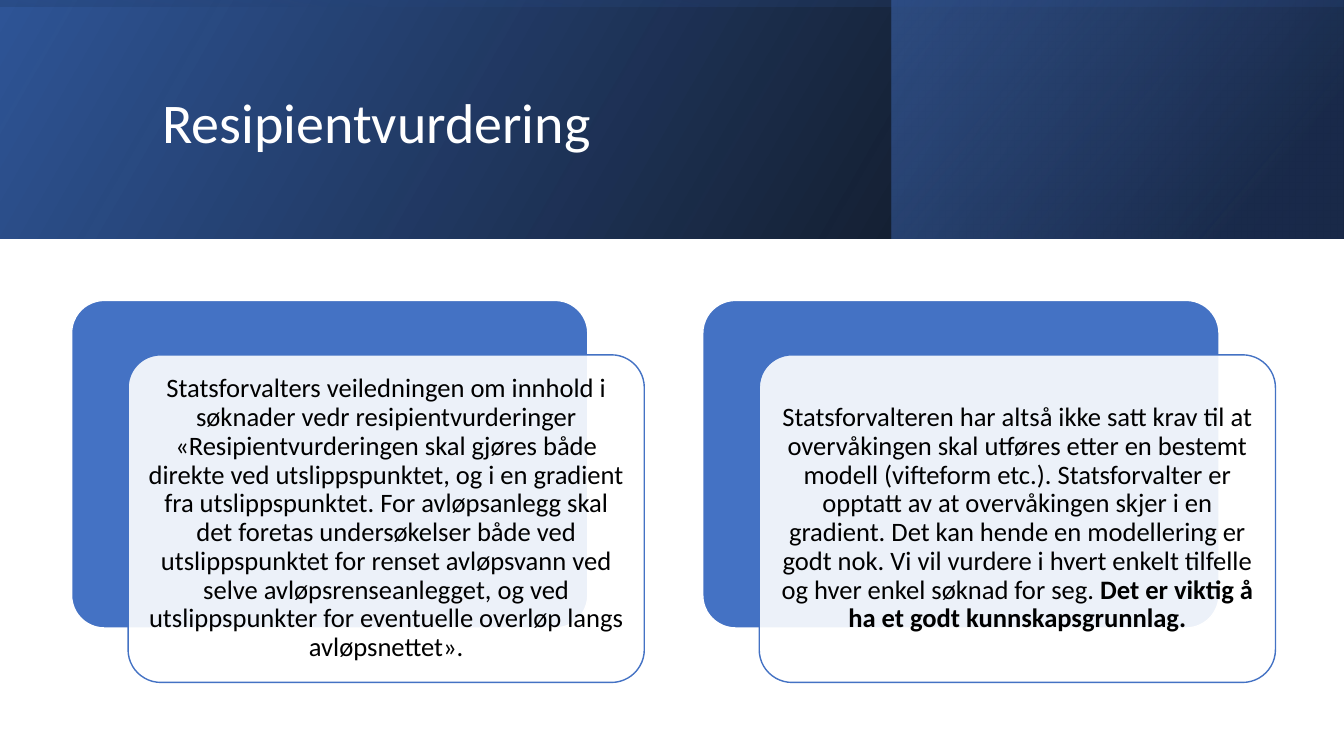
from dataclasses import dataclass

from pptx import Presentation, util as u
from pptx.dml.color import RGBColor
from pptx.enum import shapes, text
from pptx.oxml import parse_xml
from pptx.oxml.ns import nsdecls, qn

WHITE = RGBColor(0xFF, 0xFF, 0xFF)
BLACK = RGBColor(0x00, 0x00, 0x00)
BLUE = RGBColor(0x44, 0x72, 0xC4)
DEEP_BLUE = RGBColor(0x2F, 0x55, 0x97)
NAVY = RGBColor(0x20, 0x38, 0x64)

CARD_W, CARD_H = 5.12, 3.25
CARD_LEFT, CARD_TOP, CARD_PITCH = 0.71, 2.98, 6.26
FRONT_DX, FRONT_DY, TEXT_PAD = 0.56, 0.54, 0.1


@dataclass
class Stop:
    pos: int
    color: RGBColor
    alpha: int


@dataclass
class Band:
    box: tuple[float, float, float, float]
    stops: list[Stop]
    angle: int
    rotation: int = 0


@dataclass
class Run:
    text: str
    bold: bool = False


@dataclass
class Card:
    runs: list[Run]


BANDS = [
    Band((0, 0, 13.33, 2.37), [Stop(0, BLACK, 96), Stop(100, DEEP_BLUE, 100)], 330),
    Band((8.84, 0, 4.48, 2.37), [Stop(19, NAVY, 68), Stop(100, BLUE, 48)], 320),
    Band((5.48, -5.48, 2.37, 13.33), [Stop(23, DEEP_BLUE, 16), Stop(99, BLACK, 45)], 350, 270),
]

CARDS = [
    Card([Run(
        "Statsforvalters veiledningen om innhold i søknader vedr resipientvurderinger "
        "«Resipientvurderingen skal gjøres både direkte ved utslippspunktet, og i en gradient "
        "fra utslippspunktet. For avløpsanlegg skal det foretas undersøkelser både ved "
        "utslippspunktet for renset avløpsvann ved selve avløpsrenseanlegget, og ved "
        "utslippspunkter for eventuelle overløp langs avløpsnettet».")]),
    Card([
        Run("Statsforvalteren har altså ikke satt krav til at overvåkingen skal utføres etter "
            "en bestemt modell (vifteform etc.). Statsforvalter er opptatt av at overvåkingen "
            "skjer i en gradient. Det kan hende en modellering er godt nok. Vi vil vurdere i "
            "hvert enkelt tilfelle og hver enkel søknad for seg. "),
        Run("Det er viktig å ha et godt kunnskapsgrunnlag.", True)]),
]


def apply(obj, values: dict) -> None:
    for name, value in values.items():
        setattr(obj, name, value)


def inches(*values: float) -> list[u.Length]:
    return [u.Inches(v) for v in values]


def add_run(p, run: Run, size: int, color: RGBColor) -> None:
    r = p.add_run()
    r.text = run.text
    apply(r.font, {"name": "Calibri", "size": u.Pt(size), "bold": run.bold})
    r.font.color.rgb = color


def draw_band(s, band: Band) -> None:
    sp = s.shapes.add_shape(shapes.MSO_SHAPE.RECTANGLE, *inches(*band.box))
    sp.shadow.inherit = False
    sp.rotation = band.rotation
    sp.line.fill.background()
    sp.fill.background()
    stops = "".join(
        f'<a:gs pos="{stop.pos * 1000}"><a:srgbClr val="{stop.color}">'
        f'<a:alpha val="{stop.alpha * 1000}"/></a:srgbClr></a:gs>'
        for stop in band.stops)
    gradient = parse_xml(
        f'<a:gradFill {nsdecls("a")} rotWithShape="1"><a:gsLst>{stops}</a:gsLst>'
        f'<a:lin ang="{band.angle * 60000}" scaled="0"/></a:gradFill>')
    props = sp.element.spPr
    props.replace(props.find(qn("a:noFill")), gradient)
    props.find(qn("a:xfrm")).set("flipH", "1")


def draw_panel(group, left: float, top: float, fill: RGBColor, line: RGBColor, alpha: int = 100) -> None:
    sp = group.shapes.add_shape(
        shapes.MSO_SHAPE.ROUNDED_RECTANGLE, *inches(left, top, CARD_W, CARD_H))
    sp.adjustments[0] = 0.1
    sp.shadow.inherit = False
    sp.fill.solid()
    sp.fill.fore_color.rgb = fill
    sp.line.color.rgb = line
    sp.line.width = u.Pt(1)
    if alpha < 100:
        color = sp.element.spPr.find(qn("a:solidFill")).find(qn("a:srgbClr"))
        color.append(parse_xml(f'<a:alpha {nsdecls("a")} val="{alpha * 1000}"/>'))


def draw_card(s, card: Card, left: float) -> None:
    group = s.shapes.add_group_shape()
    front_left, front_top = left + FRONT_DX, CARD_TOP + FRONT_DY
    draw_panel(group, left, CARD_TOP, BLUE, WHITE)
    draw_panel(group, front_left, front_top, WHITE, BLUE, 90)
    tf = group.shapes.add_textbox(*inches(
        front_left + TEXT_PAD, front_top + TEXT_PAD,
        CARD_W - 2 * TEXT_PAD, CARD_H - 2 * TEXT_PAD)).text_frame
    apply(tf, {"word_wrap": True, "vertical_anchor": text.MSO_ANCHOR.MIDDLE})
    apply(tf, {f"margin_{side}": u.Inches(0.08) for side in ("left", "top", "right", "bottom")})
    p = tf.paragraphs[0]
    apply(p, {"alignment": text.PP_ALIGN.CENTER, "line_spacing": 0.9})
    for run in card.runs:
        add_run(p, run, 19, BLACK)


def draw_title(s, title: str) -> None:
    sp = s.shapes.title
    s.shapes.element.append(sp.element)
    left, top, width, height = inches(1.51, 0.38, 10.63, 1.72)
    apply(sp, {"left": left, "top": top, "width": width, "height": height})
    tf = sp.text_frame
    apply(tf, {"word_wrap": True, "vertical_anchor": text.MSO_ANCHOR.MIDDLE})
    p = tf.paragraphs[0]
    apply(p, {"alignment": text.PP_ALIGN.LEFT, "line_spacing": 0.9})
    add_run(p, Run(title), 40, WHITE)


def main() -> None:
    prs = Presentation()
    apply(prs, {"slide_width": u.Inches(13.33), "slide_height": u.Inches(7.5)})
    s = prs.slides.add_slide(prs.slide_layouts.get_by_name("Title Only"))
    for band in BANDS:
        draw_band(s, band)
    draw_title(s, "Resipientvurdering")
    for i, card in enumerate(CARDS):
        draw_card(s, card, CARD_LEFT + i * CARD_PITCH)
    prs.save("out.pptx")


if __name__ == "__main__":
    main()
